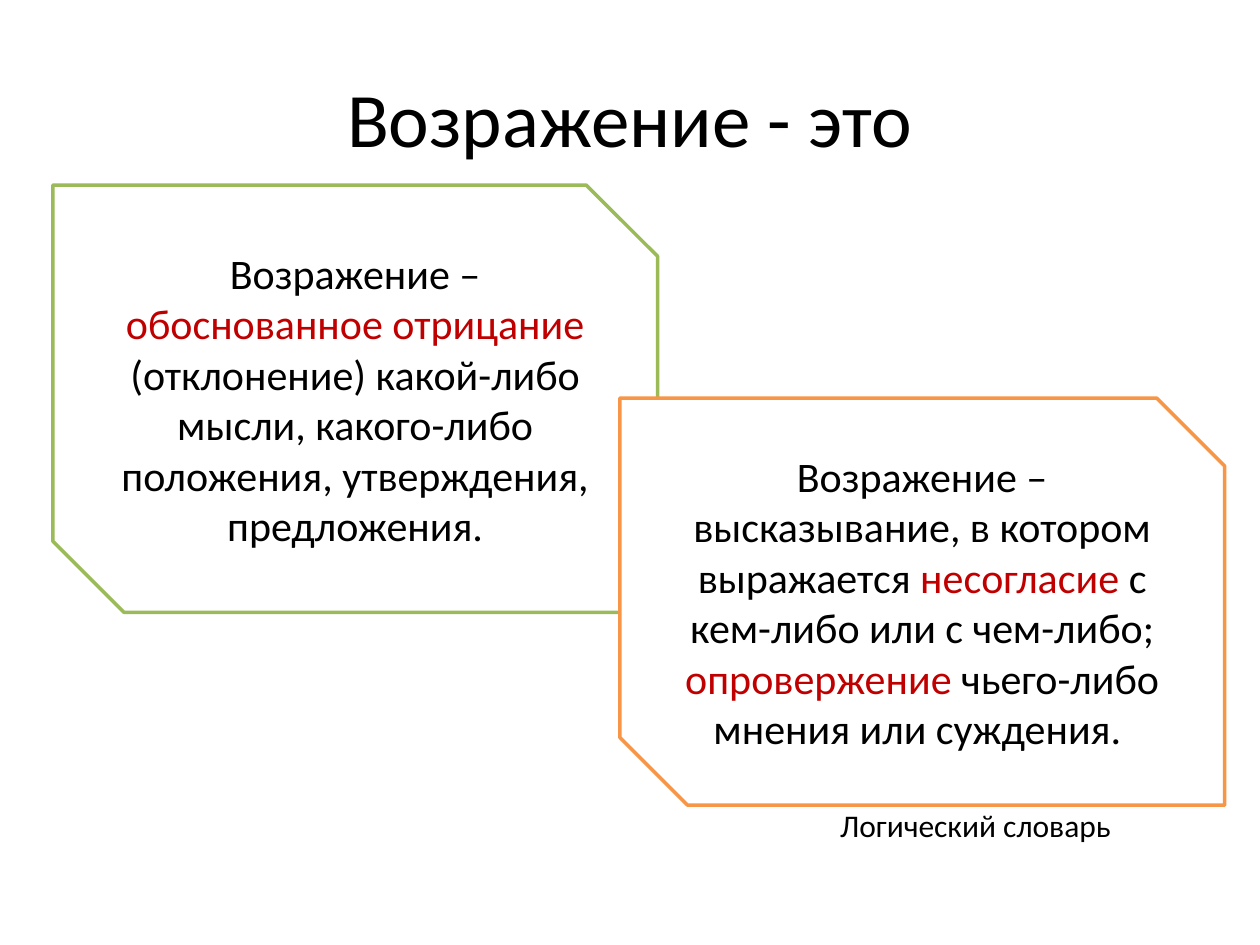
"""Build a slide with two definitions of an objection."""
from pptx import Presentation
from pptx.dml.color import RGBColor as Rgb
from pptx.enum import shapes, text
from pptx.util import Pt

THEME = {
    "font": "Calibri", "ink": "000000", "key": "C00000", "paper": "FFFFFF",
    "green": "9BBB59", "orange": "F79646",
    "title": 44, "body": 24, "note": 18, "line": 2,
}
TITLE = ("Возражение - это", (36, 21.6, 648, 90))
SOURCE = ("Логический словарь", (473, 457.2, 171.4, 28.8))
CARDS = [
    ("green", (30.2, 105.8, 345.6, 244.1), [
        ("Возражение – ", "ink"),
        ("обоснованное отрицание ", "key"),
        ("(отклонение) какой-либо мысли, какого-либо положения, "
         "утверждения, предложения.", "ink"),
    ]),
    ("orange", (354.2, 227.5, 345.6, 232.6), [
        ("Возражение – высказывание, в котором выражается ", "ink"),
        ("несогласие", "key"),
        (" с кем-либо или с чем-либо; ", "ink"),
        ("опровержение ", "key"),
        ("чьего-либо мнения или суждения. ", "ink"),
    ]),
]


def tint(name):
    return Rgb.from_string(THEME[name])


def write(shape, runs, size, align, anchor, wrap=True):
    frame = shape.text_frame
    frame.word_wrap = wrap
    frame.vertical_anchor = anchor
    para = frame.paragraphs[0]
    para.alignment = align
    para.font.name = THEME["font"]
    para.font.size = Pt(THEME[size])
    for words, color in runs:
        run = para.add_run()
        run.text = words
        run.font.color.rgb = tint(color)


def label(slide, item, size, align, anchor, wrap=True):
    words, box = item
    shape = slide.shapes.add_textbox(*map(Pt, box))
    write(shape, [(words, "ink")], size, align, anchor, wrap)
    return shape


def card(slide, edge, box, runs):
    kind = shapes.MSO_SHAPE.SNIP_2_DIAG_RECTANGLE
    shape = slide.shapes.add_shape(kind, *map(Pt, box))
    shape.shadow.inherit = False
    shape.fill.solid()
    shape.fill.fore_color.rgb = tint("paper")
    shape.line.color.rgb = tint(edge)
    shape.line.width = Pt(THEME["line"])
    write(shape, runs, "body", text.PP_ALIGN.CENTER, text.MSO_ANCHOR.MIDDLE)


def main():
    deck = Presentation()
    deck.slide_width, deck.slide_height = Pt(720), Pt(540)
    slide = deck.slides.add_slide(deck.slide_layouts[6])
    label(slide, TITLE, "title", text.PP_ALIGN.CENTER, text.MSO_ANCHOR.MIDDLE)
    note = label(slide, SOURCE, "note", text.PP_ALIGN.LEFT,
                 text.MSO_ANCHOR.TOP, wrap=False)
    note.text_frame.auto_size = text.MSO_AUTO_SIZE.SHAPE_TO_FIT_TEXT
    for edge, box, runs in CARDS:
        card(slide, edge, box, runs)
    deck.save("out.pptx")


if __name__ == "__main__":
    main()
